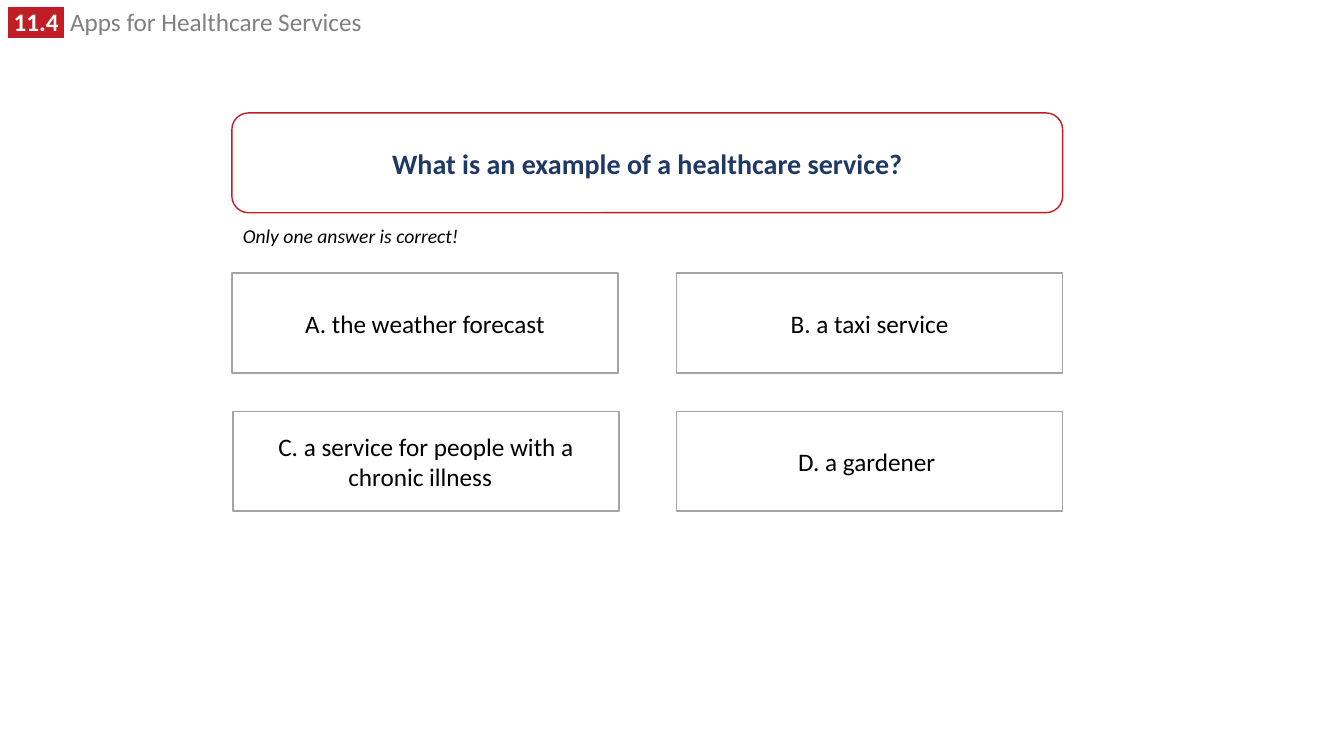
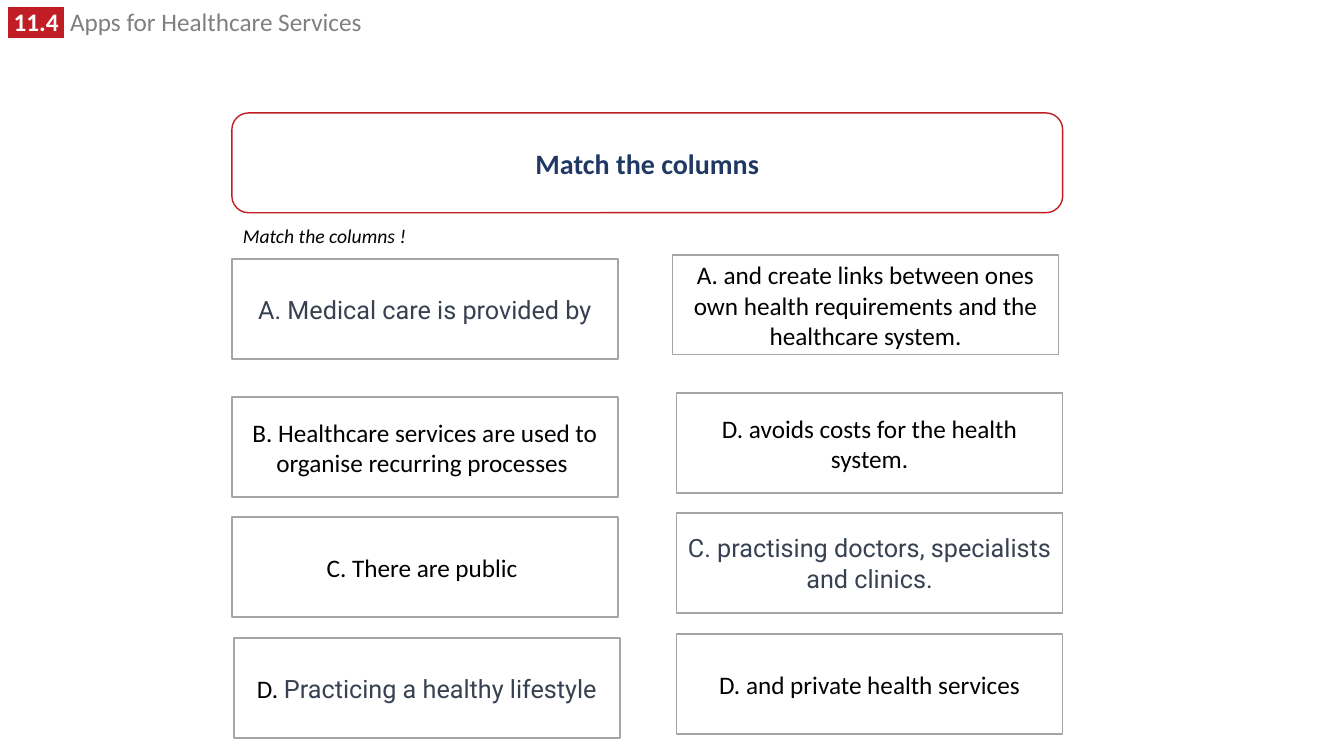
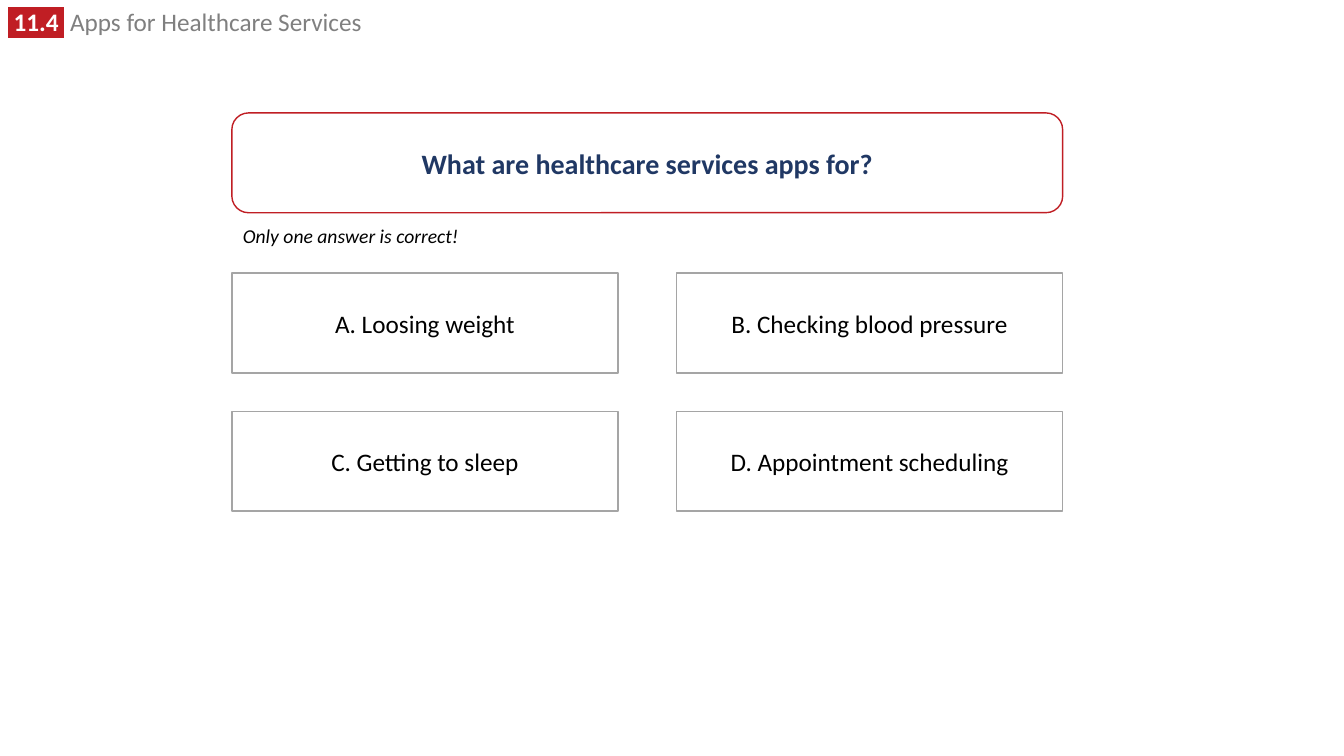
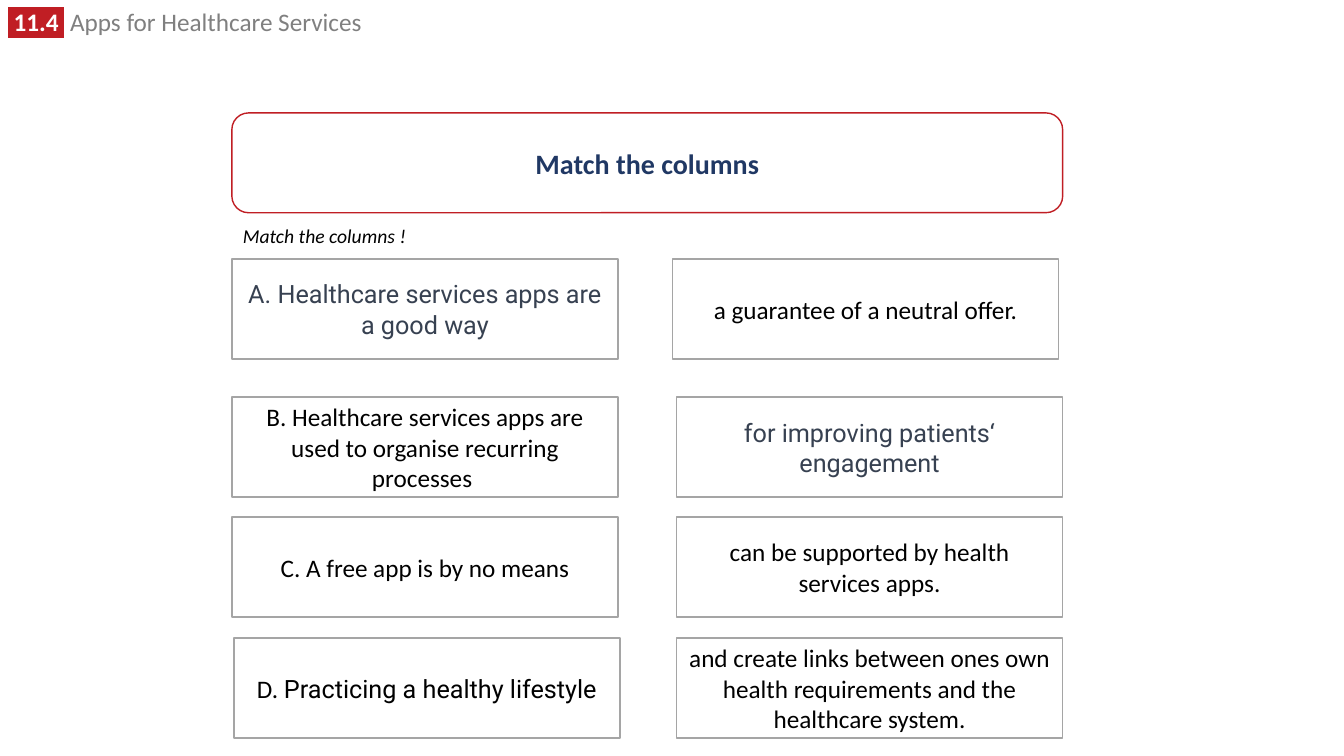
from dataclasses import dataclass

from lxml import etree
from pptx import Presentation, util as u
from pptx.dml.color import RGBColor
from pptx.enum import shapes, text
from pptx.oxml import ns

WHITE = RGBColor(0xFF, 0xFF, 0xFF)
BLACK = RGBColor(0, 0, 0)
RED = RGBColor(0xC0, 0x1E, 0x24)
NAVY = RGBColor(0x20, 0x38, 0x64)
GREY = RGBColor(0x80, 0x80, 0x80)
EDGE = RGBColor(0xA5, 0xA5, 0xA5)
SLATE = RGBColor(0x37, 0x41, 0x51)

WIDE, TALL = 13.33, 7.5
LEFT, STEP = 2.3, 4.41
CARD_W, CARD_H = 3.83, 0.99
ASK = (LEFT, 1.12, STEP + CARD_W, CARD_H)
QUIZ = (2.71, 4.08)
MATCH = (2.57, 3.94, 5.13, 6.33)


@dataclass(frozen=True)
class Bit:
    words: str
    font: str = "Calibri"
    ink: RGBColor = BLACK


@dataclass(frozen=True)
class Card:
    col: int
    row: int
    bits: tuple[Bit, ...]
    dx: float = 0
    dy: float = 0


@dataclass(frozen=True)
class Hint:
    words: str
    width: float


@dataclass(frozen=True)
class Page:
    ask: str
    hint: Hint
    rows: tuple[float, ...]
    cards: tuple[Card, ...]


def plain(col: int, row: int, words: str, dx: float = 0, dy: float = 0) -> Card:
    return Card(col, row, (Bit(words),), dx, dy)


def soft(col: int, row: int, words: str, dy: float = 0) -> Card:
    return Card(col, row, (Bit(words, "Roboto", SLATE),), dy=dy)


def habit(ink: RGBColor) -> Card:
    return Card(0, 3, (Bit("D. "), Bit("Practicing a healthy lifestyle", "Roboto", ink)), dx=0.02)


ONE = Hint("Only one answer is correct!", 2.36)
PAIR = Hint("Match the columns !", 1.84)
LIFT = -0.04

PAGES = (
    Page("What is an example of a healthcare service?", ONE, QUIZ, (
        plain(0, 0, "A. the weather forecast"),
        plain(1, 0, "B. a taxi service"),
        plain(0, 1, "C. a service for people with a chronic illness  ", dx=0.01),
        plain(1, 1, "D. a gardener "),
    )),
    Page("Match the columns", PAIR, MATCH, (
        soft(0, 0, "A. Medical care is provided by"),
        plain(0, 1, "B. Healthcare services are used to organise recurring processes "),
        plain(0, 2, "C. There are public "),
        habit(SLATE),
        plain(1, 0, "A. and create links between ones own health requirements and the healthcare system.",
              dx=-0.04, dy=LIFT),
        plain(1, 1, "D. avoids costs for the health system.", dy=LIFT),
        soft(1, 2, "C. practising doctors, specialists and clinics.", dy=LIFT),
        plain(1, 3, "D. and private health services", dy=LIFT),
    )),
    Page("What are healthcare services apps for?", ONE, QUIZ, (
        plain(0, 0, "A. Loosing weight"),
        plain(1, 0, "B. Checking blood pressure"),
        plain(0, 1, "C. Getting to sleep"),
        plain(1, 1, "D. Appointment scheduling"),
    )),
    Page("Match the columns", PAIR, MATCH, (
        soft(0, 0, "A. Healthcare services apps are a good way"),
        plain(0, 1, "B. Healthcare services apps are used to organise recurring processes "),
        plain(0, 2, "C. A free app is by no means"),
        habit(BLACK),
        plain(1, 0, "a guarantee of a neutral offer.", dx=-0.04),
        soft(1, 1, "for improving patients‘ engagement"),
        plain(1, 2, "can be supported by health services apps."),
        plain(1, 3, "and create links between ones own health requirements and the healthcare system."),
    )),
)


def write(para, words: str, *, size: float = 18, font: str = "Calibri", ink: RGBColor = BLACK,
          bold: bool = False, slant: bool = False, mark: RGBColor | None = None) -> None:
    run = para.add_run()
    run.text = words
    face = run.font
    face.size, face.name, face.bold, face.italic = u.Pt(size), font, bold, slant
    face.color.rgb = ink
    if mark is not None:
        glow = etree.Element(ns.qn("a:highlight"))
        etree.SubElement(glow, ns.qn("a:srgbClr"), val=str(mark))
        run.font.fill._xPr.find(ns.qn("a:solidFill")).addnext(glow)


def frame(slide, kind, spot: tuple[float, ...], edge: RGBColor):
    box = slide.shapes.add_shape(kind, *map(u.Inches, spot))
    box.shadow.inherit = False
    box.fill.solid()
    box.fill.fore_color.rgb = WHITE
    box.line.color.rgb = edge
    box.line.width = u.Pt(1)
    return box


def label(slide, spot: tuple[float, ...], wrap: bool):
    box = slide.shapes.add_textbox(*map(u.Inches, spot))
    box.text_frame.word_wrap = wrap
    box.text_frame.auto_size = text.MSO_AUTO_SIZE.SHAPE_TO_FIT_TEXT
    return box


def dress(layout, slide) -> None:
    for hold in list(layout.placeholders):
        if hold.placeholder_format.idx:
            hold.element.getparent().remove(hold.element)
    title = layout.placeholders[0]
    title.left, title.top, title.width, title.height = map(u.Inches, ASK)
    head = label(slide, (-0.02, 0.07, 9.52, 0.35), True)
    para = head.text_frame.paragraphs[0]
    para.line_spacing = 0.8
    write(para, " 11.4 ", ink=WHITE, bold=True, mark=RED)
    write(para, " Apps for Healthcare Services", ink=GREY)
    rim = frame(slide, shapes.MSO_SHAPE.ROUNDED_RECTANGLE, ASK, RED)
    for part in (head, rim):
        layout.shapes.element.append(part.element)


def draw(slide, page: Page) -> None:
    para = slide.shapes.title.text_frame.paragraphs[0]
    para.alignment = text.PP_ALIGN.CENTER
    write(para, page.ask, size=20, ink=NAVY, bold=True)
    hint = label(slide, (LEFT + 0.01, 2.17, page.hint.width, 0.34), False)
    write(hint.text_frame.paragraphs[0], page.hint.words, size=14, slant=True)
    for card in page.cards:
        spot = (LEFT + card.col * STEP + card.dx, page.rows[card.row] + card.dy, CARD_W, CARD_H)
        box = frame(slide, shapes.MSO_SHAPE.RECTANGLE, spot, EDGE)
        para = box.text_frame.paragraphs[0]
        para.alignment = text.PP_ALIGN.CENTER
        for bit in card.bits:
            write(para, bit.words, font=bit.font, ink=bit.ink)


def main() -> None:
    deck = Presentation()
    deck.slide_width, deck.slide_height = u.Inches(WIDE), u.Inches(TALL)
    layout = deck.slide_layouts[5]
    slides = [deck.slides.add_slide(layout) for _ in PAGES]
    dress(layout, slides[0])
    for slide, page in zip(slides, PAGES):
        draw(slide, page)
    deck.save("out.pptx")


if __name__ == "__main__":
    main()
